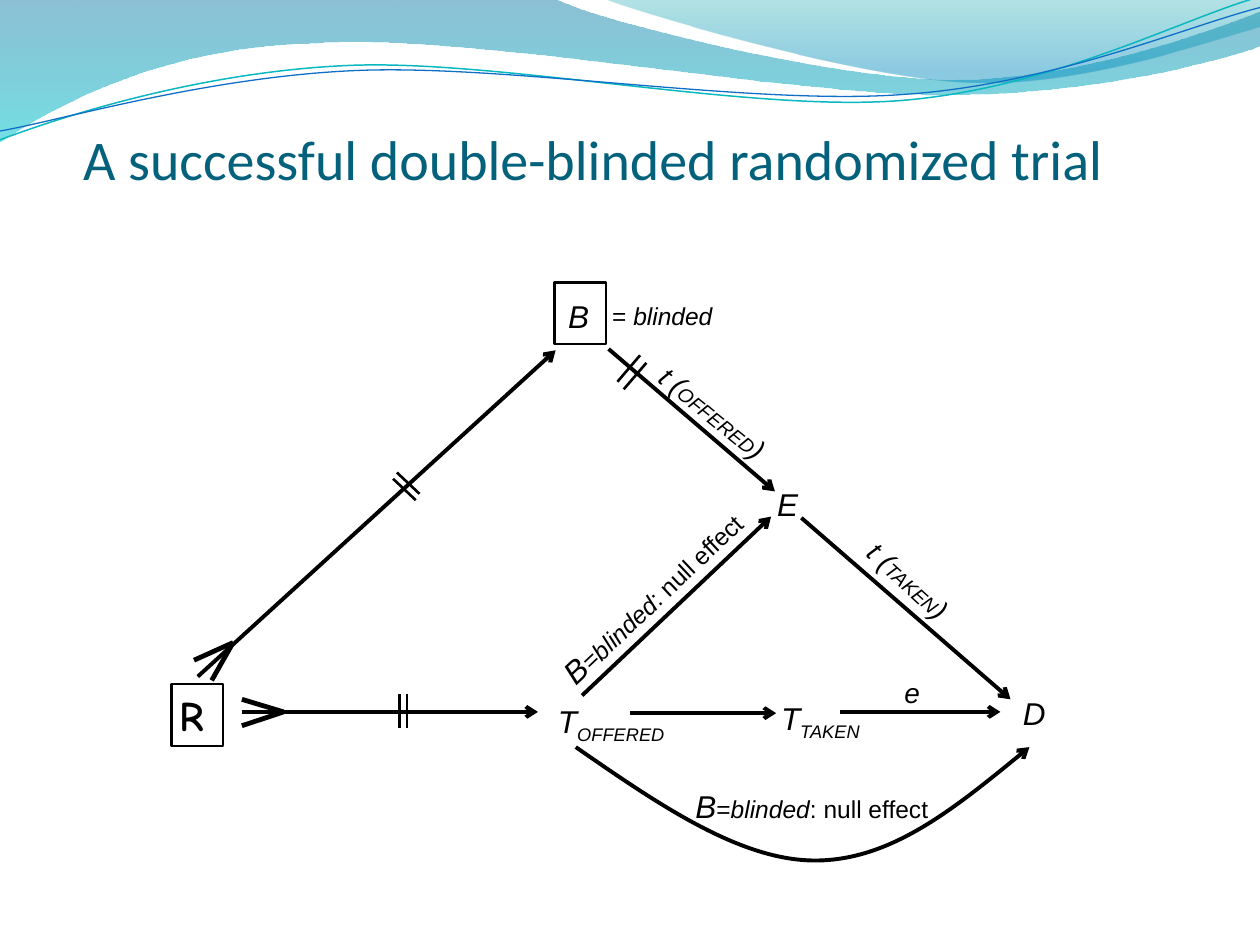
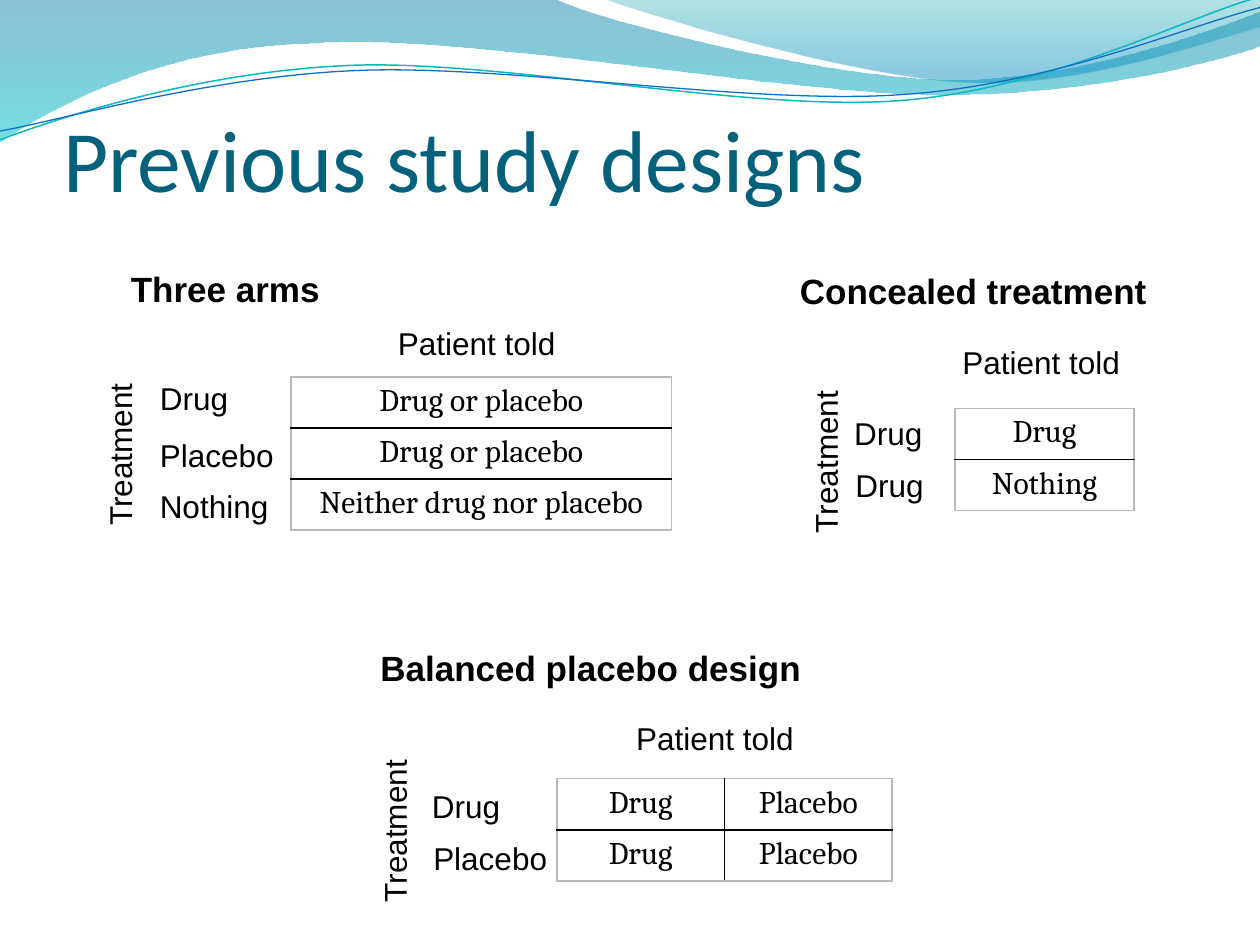
from lxml.etree import SubElement
from pptx import Presentation
from pptx.dml.color import RGBColor
from pptx.enum.shapes import MSO_CONNECTOR, MSO_SHAPE
from pptx.enum.text import MSO_ANCHOR, MSO_AUTO_SIZE, PP_ALIGN
from pptx.oxml.ns import qn
from pptx.util import Cm, Pt

BLACK = "000000"
TITLE_BLUE = "04617B"
TABLE_EDGE = "B9B9B9"
ROW_HEIGHT = Cm(1.03)

# Header waves: start point, then line ends (one pair) or Bezier pieces (three pairs)
BAND_WIDE = [(0, 0), [(4.4, -0.01)],
             [(4.76, 0.17), (6.64, 0.63), (7.58, 0.63)],
             [(8.53, 0.63), (9.58, 0.26), (10, 0.09)], [(10.01, 0.36)],
             [(9.83, 0.44), (8.7, 0.76), (7.46, 0.75)],
             [(6.22, 0.75), (3.82, 0.28), (2.57, 0.34)],
             [(1.29, 0.36), (0.46, 0.83), (-0.01, 1.13)], [(0, 0)]]
BAND_RIGHT = [(4.79, -0.01), [(5.09, 0.11), (6.82, 0.62), (7.69, 0.65)],
              [(8.56, 0.69), (9.61, 0.32), (10, 0.21)], [(10, 0)], [(4.79, -0.01)]]
WAVE_TEAL = [(0, 1.11), [(0.48, 0.93), (1.58, 0.57), (2.77, 0.52)],
             [(3.95, 0.47), (5.93, 0.89), (7.13, 0.8)],
             [(8.33, 0.71), (9.38, 0.15), (9.98, -0.02)]]
WAVE_BLUE = [(0, 1.04), [(0.47, 0.96), (1.64, 0.61), (2.83, 0.56)],
             [(4.03, 0.51), (5.97, 0.84), (7.17, 0.75)],
             [(8.36, 0.67), (9.41, 0.21), (10, 0.06)]]


def length(inches):
    return Cm(2.54 * inches)


def color(hex_value):
    return RGBColor.from_string(hex_value)


class Deck:
    """Holds the shared style and the slide being built."""

    def __init__(self):
        self.presentation = Presentation()
        self.presentation.slide_width = length(10)
        self.presentation.slide_height = length(7.5)
        self.slide = None

    def new_slide(self, title, left, top, height, size):
        self.slide = self.presentation.slides.add_slide(self.presentation.slide_layouts[6])
        self.band(BAND_WIDE, [(0, "0074A1", 45), (1, "00C6CF", 55)])
        self.band(BAND_RIGHT, [(0, "00A1A9", 30), (0.8, "008BBF", 45)])
        self.curve(WAVE_TEAL, "0AB8BF", 0.85)
        self.curve(WAVE_BLUE, "0F6FC6", 0.75)
        shape = self.text((left, top, 9.08, height), [title], size, font="Calibri",
                          ink=TITLE_BLUE, grow=False)
        frame = shape.text_frame
        frame.vertical_anchor = MSO_ANCHOR.BOTTOM
        frame.margin_left = frame.margin_right = frame.margin_bottom = 0

    def outline(self, start, pieces, close):
        points = [(length(x), length(y)) for piece in pieces for x, y in piece]
        builder = self.slide.shapes.build_freeform(*map(length, start))
        builder.add_line_segments(points, close=close)
        shape = builder.convert_to_shape()
        shape.shadow.inherit = False
        # Join each three segments of a Bezier piece into one curve
        segments = iter(list(shape.element.iter(qn("a:lnTo"))))
        for piece in pieces:
            group = [next(segments) for _ in piece]
            if len(group) == 3:
                group[0].tag = qn("a:cubicBezTo")
                for segment in group[1:]:
                    group[0].append(segment[0])
                    segment.getparent().remove(segment)
        return shape

    def band(self, outline, stops):
        shape = self.outline(outline[0], outline[1:], close=True)
        shape.line.fill.background()
        shape.fill.gradient()
        shape.fill.gradient_angle = 270
        for stop, (position, hex_value, _) in zip(shape.fill.gradient_stops, stops):
            stop.position = position
            stop.color.rgb = color(hex_value)
        for node, (_, _, alpha) in zip(shape.element.spPr.iter(qn("a:srgbClr")), stops):
            SubElement(node, qn("a:alpha"), val=str(alpha * 1000))

    def stroke(self, shape, hex_value, width, arrow=False):
        shape.line.color.rgb = color(hex_value)
        shape.line.width = Pt(width)
        if arrow:
            SubElement(shape.element.spPr.find(qn("a:ln")), qn("a:tailEnd"), type="arrow")

    def curve(self, outline, hex_value, width, arrow=False):
        shape = self.outline(outline[0], outline[1:], close=False)
        shape.fill.background()
        self.stroke(shape, hex_value, width, arrow)

    def line(self, start, end, width=2.25, arrow=False):
        connector = self.slide.shapes.add_connector(
            MSO_CONNECTOR.STRAIGHT, *map(length, (*start, *end)))
        self.stroke(connector, BLACK, width, arrow)
        SubElement(connector.element.spPr, qn("a:effectLst"))

    def frame(self, left, top):
        shape = self.slide.shapes.add_shape(
            MSO_SHAPE.RECTANGLE, *map(length, (left, top, 0.41, 0.49)))
        shape.shadow.inherit = False
        shape.fill.background()
        self.stroke(shape, BLACK, 1.5)

    def text(self, box, runs, size=18, font="Arial", ink=BLACK, bold=False, italic=False,
             wrap=True, grow=True, rotation=0):
        """Each run is a string, or a string with its own size, italic, baseline or cap."""
        shape = self.slide.shapes.add_textbox(*map(length, box))
        shape.rotation = rotation
        shape.text_frame.word_wrap = wrap
        if grow:
            shape.text_frame.auto_size = MSO_AUTO_SIZE.SHAPE_TO_FIT_TEXT
        paragraph = shape.text_frame.paragraphs[0]
        self.style(paragraph, size, font, ink)
        paragraph.font.bold = bold
        paragraph.font.italic = italic
        for item in runs:
            words, changes = (item, {}) if isinstance(item, str) else item
            run = paragraph.add_run()
            run.text = words
            if "size" in changes:
                run.font.size = Pt(changes["size"])
            if "italic" in changes:
                run.font.italic = changes["italic"]
            for name in ("baseline", "cap"):
                if name in changes:
                    run.font._element.set(name, changes[name])
        return shape

    def style(self, paragraph, size, font, ink=BLACK):
        paragraph.font.size = Pt(size)
        paragraph.font.name = font
        paragraph.font.color.rgb = color(ink)

    def table(self, left, top, column_width, rows):
        row_count, column_count = len(rows), len(rows[0])
        table = self.slide.shapes.add_table(
            row_count, column_count, length(left), length(top),
            length(column_width * column_count), ROW_HEIGHT * row_count).table
        table.first_row = table.horz_banding = False
        for row_index, row in enumerate(rows):
            table.rows[row_index].height = ROW_HEIGHT
            for column_index, words in enumerate(row):
                cell = table.cell(row_index, column_index)
                cell.text = words
                paragraph = cell.text_frame.paragraphs[0]
                paragraph.alignment = PP_ALIGN.CENTER
                self.style(paragraph, 18, "Cambria")
                self.borders(cell, {"lnL": column_index == 0,
                                    "lnR": column_index == column_count - 1,
                                    "lnT": row_index == 0,
                                    "lnB": row_index == row_count - 1})
                cell.fill.background()

    def borders(self, cell, outer_sides):
        properties = cell._tc.get_or_add_tcPr()
        for side, outer in outer_sides.items():
            border = SubElement(properties, qn(f"a:{side}"), w=str(Pt(1)))
            fill = SubElement(border, qn("a:solidFill"))
            SubElement(fill, qn("a:srgbClr"), val=TABLE_EDGE if outer else BLACK)


def build_trial(deck):
    deck.new_slide("A successful double-blinded randomized trial", 0.66, 0.92, 0.6, 32)

    # Nodes
    for box, letter, subscript in [
            ((4.33, 5.52, 1.25, 0.4), "T", "OFFERED"), ((6.1, 5.5, 1.05, 0.4), "T", "TAKEN"),
            ((8.02, 5.46, 0.4, 0.44), "D", ""), ((6.07, 3.8, 0.4, 0.4), "E", ""),
            ((4.41, 2.31, 0.41, 0.4), "B", "")]:
        runs = [letter] + ([(subscript, {"baseline": "-25000"})] if subscript else [])
        deck.text(box, runs, italic=True)
    deck.text((1.33, 5.42, 0.54, 0.51), ["R"], 24, font="Comic Neue", bold=True)
    deck.frame(4.4, 2.24)
    deck.frame(1.36, 5.43)
    deck.text((4.76, 2.34, 1, 0.34), ["= ", ("blinded", {"italic": True})], 14, wrap=False)

    # Arrows between nodes
    for start, end in [
            ((6.36, 4.11), (8.02, 5.55)), ((4.83, 2.77), (6.15, 3.9)),
            ((4.62, 5.52), (6.12, 4.1)), ((1.57, 5.37), (4.41, 2.78)),
            ((1.92, 5.65), (4.27, 5.65)), ((5, 5.66), (6.16, 5.66)),
            ((6.67, 5.65), (7.94, 5.65))]:
        deck.line(start, end, arrow=True)
    deck.curve([(4.57, 5.93), [(5.22, 6.38), (5.87, 6.83), (6.47, 6.83)],
                [(7.07, 6.83), (7.62, 6.38), (8.17, 5.93)]], BLACK, 2.25, arrow=True)

    # Forked arrow tails
    for tip, ends in [((1.85, 5.1), [(1.68, 5.4), (1.54, 5.24)]),
                      ((2.25, 5.65), [(1.92, 5.76), (1.92, 5.55)])]:
        for end in ends:
            deck.line(tip, end, 2.75)

    # Double ticks: first tick, its span, and the shift to the second
    for (x, y), (width, height), (shift_x, shift_y) in [
            ((3.17, 5.51), (0, 0.27), (0.06, 0)),
            ((5.13, 2.88), (-0.18, 0.21), (-0.05, -0.06)),
            ((3.3, 3.97), (-0.18, -0.17), (0.03, -0.05))]:
        for tick in range(2):
            left, top = x + tick * shift_x, y + tick * shift_y
            deck.line((left, top), (left + width, top + height), 1.5)

    # Arrow labels
    for box, word, rotation in [((6.72, 4.43, 0.99, 0.37), "taken", 42.5),
                                ((5.05, 3.1, 1.23, 0.37), "offered", 39.3)]:
        deck.text(box, ["t (", (word, {"size": 14, "cap": "small"}), ")"], 16,
                  italic=True, wrap=False, rotation=rotation)
    for box, rotation in [((4.12, 4.46, 2.28, 0.4), 316.57), ((5.42, 6.2, 2.21, 0.4), 0)]:
        deck.text(box, [("B", {"size": 18, "italic": True}), "=",
                        ("blinded", {"italic": True}), ": null effect"], 14,
                  rotation=rotation)
    deck.text((7.08, 5.31, 0.33, 0.37), ["e"], 16, italic=True, wrap=False)


def build_designs(deck):
    deck.new_slide("Previous study designs", 0.5, 0.42, 1.25, 50)
    # Heading box, "Patient told" and "Treatment" corners, row labels, table
    designs = [
        ("Three arms", (0.94, 2.07, 1.9, 0.44), (3.06, 2.52), (0.28, 3.4),
         [("Drug", 1.17, 2.96, 0.75), ("Placebo", 1.17, 3.41, 1.11),
          ("Nothing", 1.17, 3.82, 1.07)],
         (2.31, 2.99, 3.02, [["Drug or placebo"], ["Drug or placebo"],
                             ["Neither drug nor placebo"]])),
        ("Concealed treatment", (6.25, 2.09, 3.42, 0.44), (7.54, 2.67), (5.88, 3.46),
         [("Drug", 6.68, 3.24, 0.75), ("Drug", 6.69, 3.65, 0.75)],
         (7.58, 3.24, 1.42, [["Drug"], ["Nothing"]])),
        ("Balanced placebo design", (2.92, 5.08, 4.45, 0.44), (4.95, 5.66), (2.46, 6.39),
         [("Drug", 3.33, 6.2, 0.75), ("Placebo", 3.34, 6.61, 1.11)],
         (4.42, 6.18, 1.33, [["Drug", "Placebo"]] * 2)),
    ]
    for heading, heading_box, told, treatment, labels, grid in designs:
        deck.text(heading_box, [heading], 20, bold=True)
        deck.text((*told, 1.46, 0.4), ["Patient told"], wrap=False)
        deck.text((*treatment, 1.34, 0.4), ["Treatment"], wrap=False, rotation=270)
        for label, left, top, width in labels:
            deck.text((left, top, width, 0.4), [label], wrap=False)
        deck.table(*grid)


def main():
    deck = Deck()
    build_trial(deck)
    build_designs(deck)
    deck.presentation.save("out.pptx")


if __name__ == "__main__":
    main()
